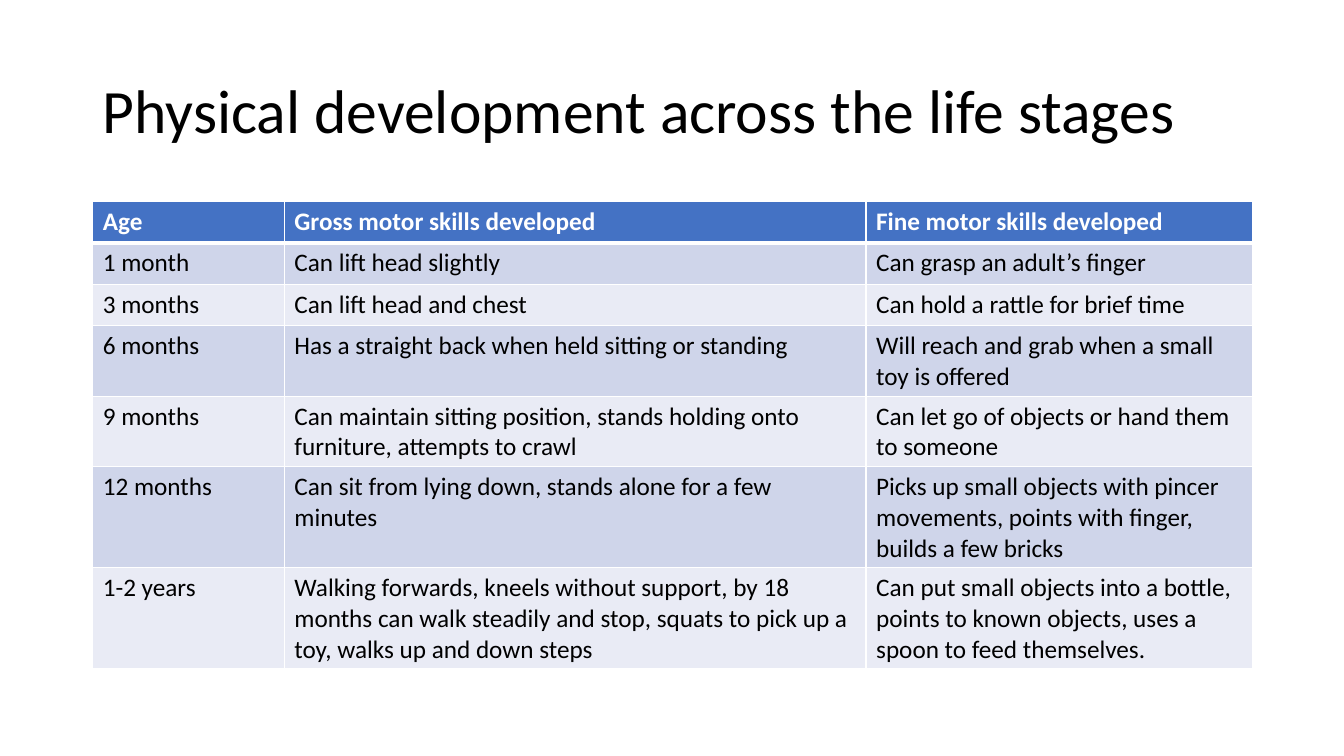
from lxml.etree import SubElement
from pptx import Presentation
from pptx.dml.color import RGBColor
from pptx.enum.text import MSO_ANCHOR
from pptx.oxml.ns import qn
from pptx.util import Inches, Pt

COLORS = {
    "header": "4472C4",
    "band_dark": "CFD5EA",
    "band_light": "E9EBF5",
    "white": "FFFFFF",
    "black": "000000",
}
FONT = "Calibri"
LEFT, WIDTH = Inches(0.92), Inches(11.5)
ROW_HEIGHT = Inches(0.41)
COLUMN_WIDTHS = [1.9, 5.77, 3.83]

MILESTONES = [
    ("Age", "Gross motor skills developed", "Fine motor skills developed"),
    ("1 month", "Can lift head slightly", "Can grasp an adult’s finger"),
    ("3 months", "Can lift head and chest", "Can hold a rattle for brief time"),
    ("6 months", "Has a straight back when held sitting or standing",
     "Will reach and grab when a small toy is offered"),
    ("9 months",
     "Can maintain sitting position, stands holding onto furniture, attempts to crawl",
     "Can let go of objects or hand them to someone"),
    ("12 months", "Can sit from lying down, stands alone for a few minutes",
     "Picks up small objects with pincer movements, points with finger, builds a few bricks"),
    ("1-2 years",
     "Walking forwards, kneels without support, by 18 months can walk steadily and stop, "
     "squats to pick up a toy, walks up and down steps",
     "Can put small objects into a bottle, points to known objects, "
     "uses a spoon to feed themselves."),
]


def write(frame, text, size, color, bold=False):
    para = frame.paragraphs[0]
    para.text = text
    font = para.runs[0].font
    font.name, font.size, font.bold = FONT, Pt(size), bold
    font.color.rgb = RGBColor.from_string(COLORS[color])
    return para


def add_borders(cell, widths):
    properties = cell._tc.get_or_add_tcPr()
    for side, width in widths.items():
        line = SubElement(properties, qn(f"a:ln{side}"), w=str(Pt(width)))
        fill = SubElement(line, qn("a:solidFill"))
        SubElement(fill, qn("a:srgbClr"), val=COLORS["white"])


deck = Presentation()
deck.slide_width, deck.slide_height = Inches(13.33), Inches(7.5)
page = deck.slides.add_slide(deck.slide_layouts[6])

# Title
title_box = page.shapes.add_textbox(LEFT, Inches(0.4), WIDTH, Inches(1.45))
title_box.text_frame.word_wrap = True
title_box.text_frame.vertical_anchor = MSO_ANCHOR.MIDDLE
title = write(title_box.text_frame, "Physical development across the life stages", 44, "black")
title.line_spacing = 0.9

# Table of milestones; rows grow with their text
table = page.shapes.add_table(len(MILESTONES), len(COLUMN_WIDTHS), LEFT, Inches(2),
                              WIDTH, ROW_HEIGHT * len(MILESTONES)).table
for column, width in zip(table.columns, COLUMN_WIDTHS):
    column.width = Inches(width)

for row_index, milestone in enumerate(MILESTONES):
    is_header = row_index == 0
    if is_header:
        fill_color = "header"
    else:
        fill_color = "band_dark" if row_index % 2 else "band_light"
    for column_index, text in enumerate(milestone):
        cell = table.cell(row_index, column_index)
        write(cell.text_frame, text, 18, "white" if is_header else "black", is_header)
        # The rule under the header is heavier
        add_borders(cell, {"L": 1, "R": 1, "T": 3 if row_index == 1 else 1,
                           "B": 3 if is_header else 1})
        cell.fill.solid()
        cell.fill.fore_color.rgb = RGBColor.from_string(COLORS[fill_color])

deck.save("out.pptx")
